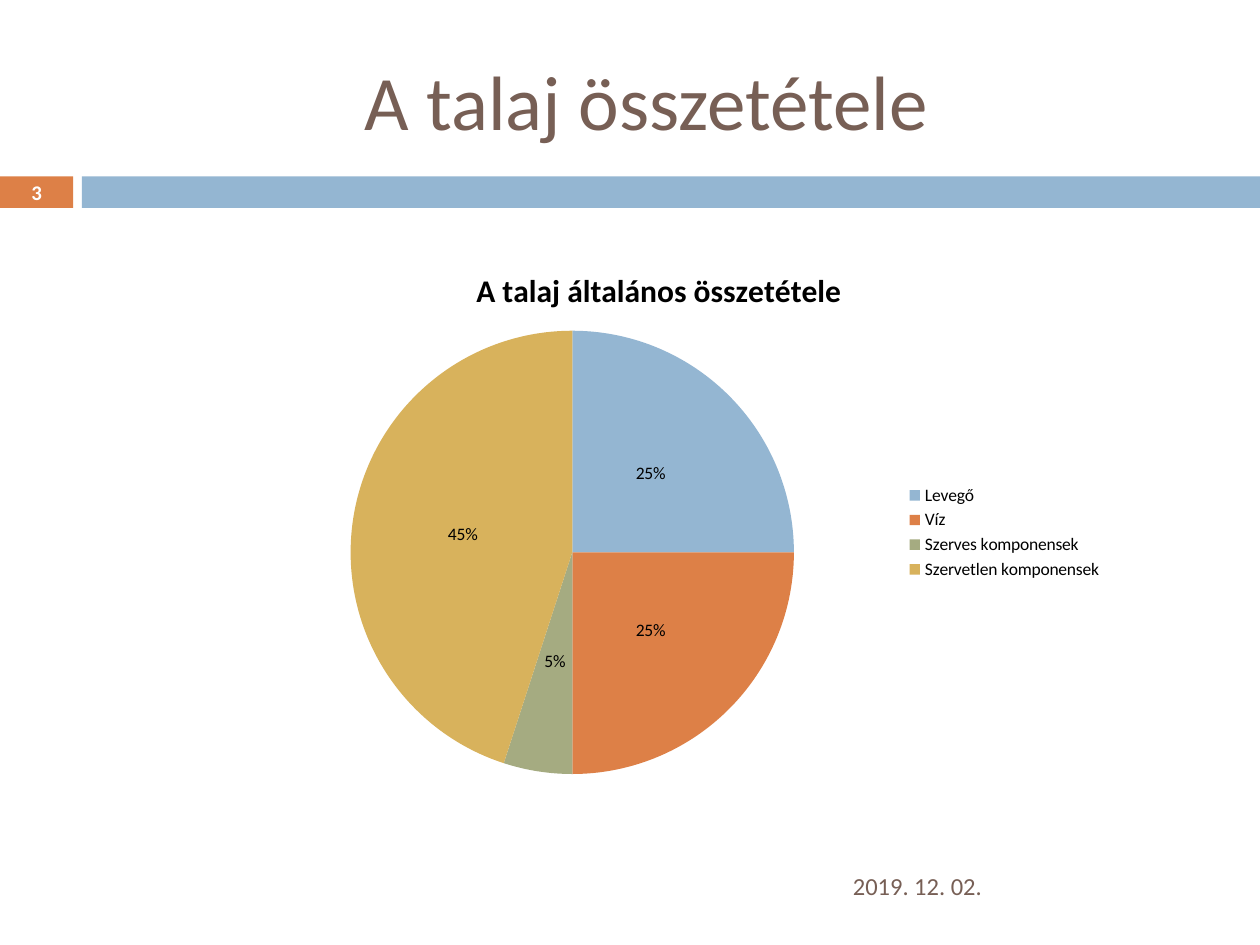
from lxml import etree
from pptx import Presentation
from pptx.chart.data import CategoryChartData
from pptx.dml.color import RGBColor
from pptx.enum.chart import XL_CHART_TYPE as ChartType, XL_LABEL_POSITION as LabelPos, XL_LEGEND_POSITION as LegendPos
from pptx.enum.shapes import MSO_SHAPE as Shape
from pptx.enum.text import MSO_ANCHOR as Anchor, PP_ALIGN as Align
from pptx.oxml.ns import qn
from pptx.util import Inches, Pt

THEME = {
    "font": "Calibri",
    "brown": RGBColor.from_string("775F55"),
    "white": RGBColor.from_string("FFFFFF"),
    "black": RGBColor.from_string("000000"),
    "blue": RGBColor.from_string("94B6D2"),
    "orange": RGBColor.from_string("DD8047"),
    "green": RGBColor.from_string("A5AB81"),
    "gold": RGBColor.from_string("D8B25C"),
    "title": Pt(44), "date": Pt(14), "number": Pt(11.9),
    "chart_title": Pt(18), "chart": Pt(10),
}


def style_font(font, size, color, bold=False):
    values = {"name": THEME["font"], "size": THEME[size], "bold": bold}
    for name, value in values.items():
        setattr(font, name, value)
    font.color.rgb = THEME[color]


deck = Presentation()
deck.slide_width, deck.slide_height = Inches(10), Inches(7.5)
page = deck.slides.add_slide(deck.slide_layouts[6])

# Band under the title
for left, width, color in [(0, 0.58, "orange"), (0.65, 9.35, "blue")]:
    band = page.shapes.add_shape(Shape.RECTANGLE, Inches(left), Inches(1.4), Inches(width), Inches(0.25))
    band.shadow.inherit = False
    band.fill.solid()
    band.fill.fore_color.rgb = THEME[color]
    band.line.fill.background()

# Title, date and page number
texts = [
    ("A talaj összetétele", (0.67, 0.25, 8.92, 1.08), Align.CENTER, "title", "brown", False),
    ("2019. 12. 02.", (6.67, 6.83, 2.92, 0.4), Align.LEFT, "date", "brown", False),
    ("3", (0, 1.39, 0.58, 0.27), Align.CENTER, "number", "white", True),
]
for text, place, align, size, color, bold in texts:
    box = page.shapes.add_textbox(*map(Inches, place))
    frame = box.text_frame
    for name, value in {"word_wrap": True, "vertical_anchor": Anchor.MIDDLE,
                        "margin_top": 0, "margin_bottom": 0}.items():
        setattr(frame, name, value)
    para = frame.paragraphs[0]
    para.alignment = align
    span = para.add_run()
    span.text = text
    style_font(span.font, size, color, bold)

# Pie chart of the soil components
parts = [
    ("Levegő", 0.25, "blue"),
    ("Víz", 0.25, "orange"),
    ("Szerves komponensek", 0.05, "green"),
    ("Szervetlen komponensek", 0.45, "gold"),
]
data = CategoryChartData(number_format="0%")
data.categories = [name for name, _, _ in parts]
data.add_series("Összetétel", [value for _, value, _ in parts])
chart = page.shapes.add_chart(ChartType.PIE, Inches(1.61), Inches(1.94), Inches(7.24), Inches(4.57), data).chart
style_font(chart.font, "chart", "black")

chart.has_title = True
heading = chart.chart_title.text_frame.paragraphs[0].add_run()
heading.text = "A talaj általános összetétele"
style_font(heading.font, "chart_title", "black", True)

chart.has_legend = True
chart.legend.position = LegendPos.RIGHT
chart.legend.include_in_layout = False

# Slices and their labels
plot = chart.plots[0]
plot.vary_by_categories = True
for index, (_, _, color) in enumerate(parts):
    slice_fill = plot.series[0].points[index].format.fill
    slice_fill.solid()
    slice_fill.fore_color.rgb = THEME[color]
plot.has_data_labels = True
labels = plot.data_labels
for name, value in {"show_value": True, "show_percentage": False, "number_format": "0%",
                    "number_format_is_linked": False, "position": LabelPos.CENTER}.items():
    setattr(labels, name, value)
style_font(labels.font, "chart", "black")

# Place of the pie inside the chart, as shares of its size
area = chart.element.find(".//" + qn("c:plotArea"))
layout = area.find(qn("c:layout"))
if layout is None:
    layout = etree.Element(qn("c:layout"))
    area.insert(0, layout)
manual = etree.SubElement(layout, qn("c:manualLayout"))
for tag, value in [("layoutTarget", "inner"), ("xMode", "edge"), ("yMode", "edge"),
                   ("x", 0.16), ("y", 0.15), ("w", 0.49), ("h", 0.77)]:
    etree.SubElement(manual, qn("c:" + tag)).set("val", str(value))

deck.save("out.pptx")
